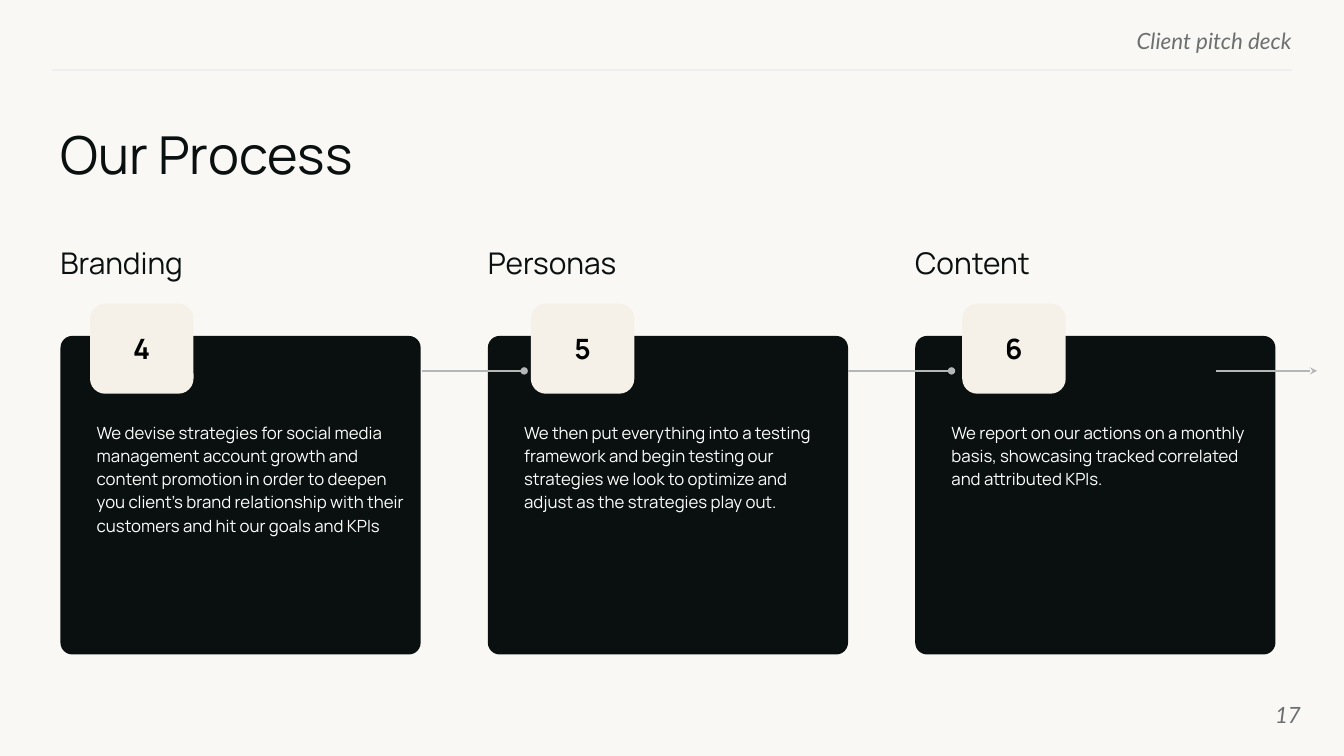
from lxml import etree
from pptx import Presentation
from pptx.dml.color import RGBColor
from pptx.enum.shapes import MSO_CONNECTOR, MSO_SHAPE
from pptx.enum.text import MSO_ANCHOR, PP_ALIGN
from pptx.oxml.ns import qn
from pptx.util import Inches, Pt

ROUNDED = MSO_SHAPE.ROUNDED_RECTANGLE
STRAIGHT = MSO_CONNECTOR.STRAIGHT
TOP, MIDDLE = MSO_ANCHOR.TOP, MSO_ANCHOR.MIDDLE
LEFT, CENTER, RIGHT = PP_ALIGN.LEFT, PP_ALIGN.CENTER, PP_ALIGN.RIGHT

PAPER = RGBColor(0xF9, 0xF8, 0xF5)
INK = RGBColor(0x09, 0x10, 0x0F)
CREAM = RGBColor(0xF5, 0xF1, 0xE8)
GREY = RGBColor(0x6C, 0x70, 0x6F)
ARROW_GREY = RGBColor(0xB5, 0xB7, 0xB7)
RULE_GREY = RGBColor(0xEF, 0xEF, 0xEF)
WHITE = RGBColor(0xFF, 0xFF, 0xFF)
BLACK = RGBColor(0, 0, 0)

PAGE_WIDTH = 10
PAGE_HEIGHT = PAGE_WIDTH * 9 / 16
CARD_LEFT, CARD_STEP, CARD_WIDTH = 0.45, 3.18, 2.68
ARROW_Y = 2.76

# number, badge left, heading, description
STEPS = [
    ("4", 0.67, "Branding",
     "We devise strategies for social media management account growth and "
     "content promotion in order to deepen you client’s brand relationship "
     "with their customers and hit our goals and KPIs"),
    ("5", 3.95, "Personas",
     "We then put everything into a testing framework and begin testing our "
     "strategies we look to optimize and adjust as the strategies play out."),
    ("6", 7.16, "Content",
     "We report on our actions on a monthly basis, showcasing tracked "
     "correlated and attributed KPIs."),
]

# start x, end x, end mark
ARROWS = [(3.14, 3.9, "oval"), (6.31, 7.08, "oval"), (9.05, 9.8, "stealth")]


def write(shape, text, size, color, font="Manrope", align=LEFT, anchor=TOP,
          inset=0, bold=False, italic=False):
    """Fill a shape with one formatted paragraph and return that paragraph."""
    frame = shape.text_frame
    frame.word_wrap = True
    frame.vertical_anchor = anchor
    frame.margin_left = frame.margin_right = Inches(inset)
    frame.margin_top = frame.margin_bottom = Inches(inset)
    frame.text = text
    para = frame.paragraphs[0]
    para.alignment = align
    style = para.runs[0].font
    style.name, style.size = font, Pt(size)
    style.bold, style.italic = bold, italic
    style.color.rgb = color
    return para


def add_text(page, left, top, width, height, text, size, color, **options):
    box = page.shapes.add_textbox(
        Inches(left), Inches(top), Inches(width), Inches(height))
    return write(box, text, size, color, **options)


def add_rounded_box(page, left, top, width, height, radius, color):
    box = page.shapes.add_shape(
        ROUNDED, Inches(left), Inches(top), Inches(width), Inches(height))
    box.adjustments[0] = radius
    box.shadow.inherit = False
    box.fill.solid()
    box.fill.fore_color.rgb = color
    box.line.fill.background()
    return box


def add_line(page, start_x, end_x, y, color, weight, end_mark=None):
    line = page.shapes.add_connector(
        STRAIGHT, Inches(start_x), Inches(y), Inches(end_x), Inches(y))
    line.line.color.rgb = color
    line.line.width = Pt(weight)
    if end_mark:
        etree.SubElement(line.line._get_or_add_ln(), qn("a:tailEnd"),
                         type=end_mark, w="sm", len="sm")
    etree.SubElement(line._element.spPr, qn("a:effectLst"))


def add_step_card(page, left, heading, description):
    add_rounded_box(page, left, 2.5, CARD_WIDTH, 2.37, 0.037, INK)
    add_text(page, left, 1.82, CARD_WIDTH, 0.24, heading, 16, INK)
    para = add_text(page, left + 0.27, 3.12, 2.3, 1.99, description, 9, WHITE)
    para.line_spacing = 1.15


def add_badge(page, left, number):
    badge = add_rounded_box(page, left, 2.26, 0.77, 0.67, 0.167, CREAM)
    write(badge, number, 15, BLACK, align=CENTER, anchor=MIDDLE,
          inset=0.1, bold=True)


def main():
    deck = Presentation()
    deck.slide_width, deck.slide_height = Inches(PAGE_WIDTH), Inches(PAGE_HEIGHT)
    page = deck.slides.add_slide(deck.slide_layouts[6])
    page.background.fill.solid()
    page.background.fill.fore_color.rgb = PAPER

    add_line(page, 0.39, 9.61, 0.52, RULE_GREY, 0.75)
    add_text(page, 5.76, 0.2, 3.85, 0.18, "Client pitch deck", 12, GREY,
             font="Lato", align=RIGHT, italic=True)
    title = add_text(page, 0.45, 0.91, 9.23, 0.51, "Our Process", 28, INK)
    title.space_after = Pt(10)

    for index, (_, _, heading, description) in enumerate(STEPS):
        add_step_card(page, CARD_LEFT + index * CARD_STEP, heading, description)
    for start_x, end_x, end_mark in ARROWS:
        add_line(page, start_x, end_x, ARROW_Y, ARROW_GREY, 1, end_mark)
    for number, badge_left, _, _ in STEPS:
        add_badge(page, badge_left, number)

    add_text(page, 9.08, 5.1, 0.6, 0.43, "17", 12, GREY,
             font="Lato", align=RIGHT, anchor=MIDDLE, italic=True)
    deck.save("out.pptx")


if __name__ == "__main__":
    main()
